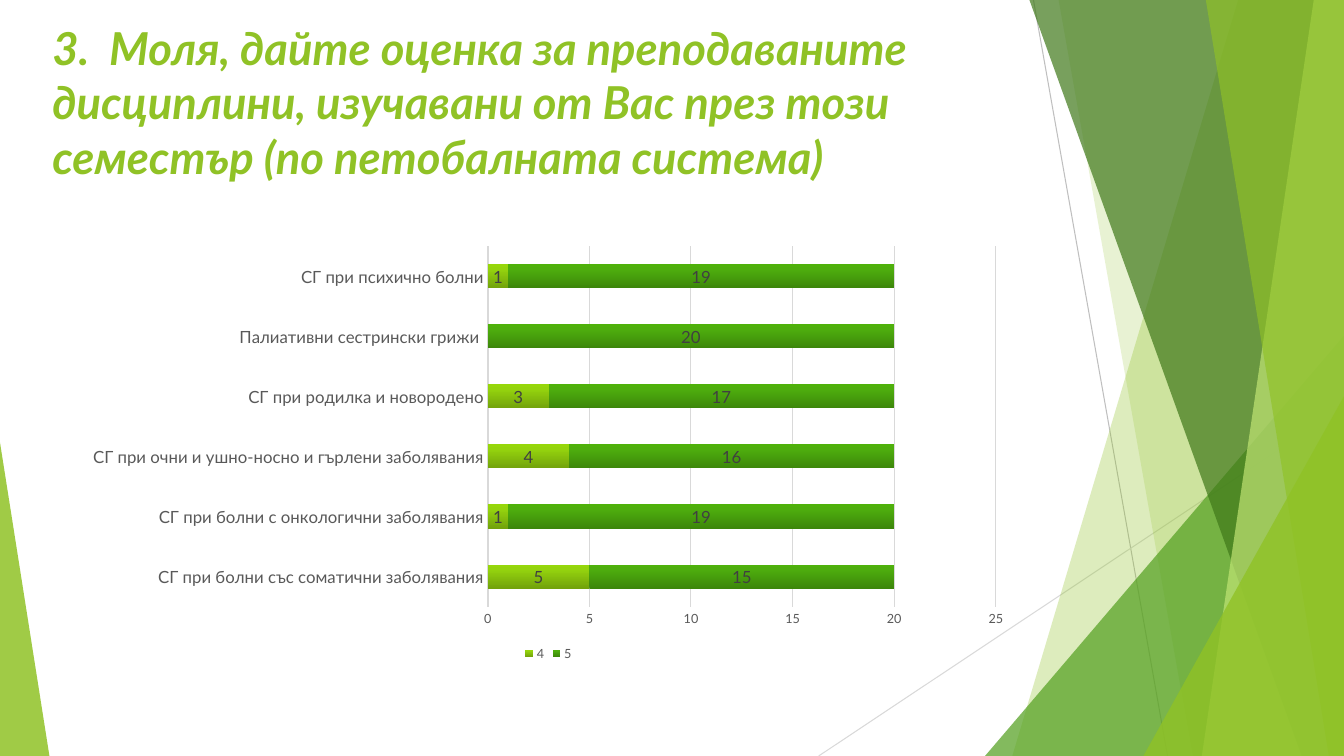
from copy import deepcopy

from lxml import etree
from pptx import Presentation
from pptx.chart.data import CategoryChartData
from pptx.dml.color import RGBColor
from pptx.enum.chart import XL_CHART_TYPE, XL_LEGEND_POSITION, XL_TICK_MARK
from pptx.enum.shapes import MSO_CONNECTOR, MSO_SHAPE
from pptx.enum.text import MSO_ANCHOR
from pptx.oxml import parse_xml
from pptx.oxml.ns import nsdecls, qn
from pptx.util import Inches, Pt

STRAIGHT = MSO_CONNECTOR.STRAIGHT
TRIANGLE = MSO_SHAPE.ISOSCELES_TRIANGLE
BAR_STACKED = XL_CHART_TYPE.BAR_STACKED
LEGEND_BOTTOM = XL_LEGEND_POSITION.BOTTOM
NO_TICK = XL_TICK_MARK.NONE
TOP = MSO_ANCHOR.TOP

COLUMNS, ROWS = 133.3, 75
FONT = "Lato"
GREEN, LEAF, FOREST, LIME = "90C226", "54A021", "3F7819", "C0E474"
GRAY, DARK_GRAY, PALE_GRAY = "595959", "404040", "D9D9D9"

TITLE = ("3.  Моля, дайте оценка за преподаваните дисциплини, "
         "изучавани от Вас през този семестър (по петобалната система)")
SUBJECTS = [
    "СГ при болни със соматични заболявания",
    "СГ при болни с онкологични заболявания",
    "СГ при очни и ушно-носно и гърлени заболявания",
    "СГ при родилка и новородено",
    "Палиативни сестрински грижи ",
    "СГ при психично болни",
]
GRADES = {"4": [5, 1, 4, 3, None, 1], "5": [15, 19, 16, 17, 20, 19]}
GRADIENTS = [("72A20B", "94D30E", "96D70A"), ("3C860A", "4EAD0E", "4EB10A")]
PLOT_AREA = {"x": 0.436, "y": 0.02, "w": 0.536, "h": 0.843}


def color(value):
    return RGBColor.from_string(value)


def grid(*lengths):
    return [Inches(length / 10) for length in lengths]


class SlideBuilder:
    """Draws styled elements on a slide in columns and rows of a tenth of an inch."""

    def __init__(self, presentation):
        self.slide = presentation.slides.add_slide(presentation.slide_layouts[6])
        self.shapes = self.slide.shapes

    def style_font(self, font, size, shade, bold=False, italic=False):
        font.name, font.size = FONT, Pt(size)
        font.bold, font.italic = bold, italic
        font.color.rgb = color(shade)

    def line(self, start, end, shade):
        connector = self.shapes.add_connector(STRAIGHT, *grid(*start, *end))
        connector.line.color.rgb = color(shade)
        connector.line.width = Pt(0.75)
        etree.SubElement(connector._element.spPr, qn("a:effectLst"))

    def paint(self, shape, shade, opacity):
        shape.shadow.inherit = False
        shape.line.fill.background()
        shape.fill.solid()
        shape.fill.fore_color.rgb = color(shade)
        rgb = shape._element.spPr.find(".//" + qn("a:srgbClr"))
        etree.SubElement(rgb, qn("a:alpha")).set("val", str(opacity * 1000))

    def band(self, top_left, bottom_left, shade, opacity):
        points = [(COLUMNS, 0), (COLUMNS, ROWS), (bottom_left, ROWS)]
        builder = self.shapes.build_freeform(*grid(top_left, 0), scale=1.0)
        builder.add_line_segments([grid(*point) for point in points], close=True)
        self.paint(builder.convert_to_shape(), shade, opacity)

    def corner(self, left, top, width, apex, shade, opacity):
        shape = self.shapes.add_shape(TRIANGLE, *grid(left, top, width, ROWS - top))
        shape.adjustments[0] = apex
        self.paint(shape, shade, opacity)

    def title(self, text, left, top, width, height):
        frame = self.shapes.add_textbox(*grid(left, top, width, height)).text_frame
        frame.word_wrap = True
        frame.vertical_anchor = TOP
        paragraph = frame.paragraphs[0]
        paragraph.text = text
        self.style_font(paragraph.font, 32.4, GREEN, bold=True, italic=True)

    def stacked_bars(self, categories, series_values, left, top, width, height):
        data = CategoryChartData()
        data.categories = categories
        for name, values in series_values.items():
            data.add_series(name, values)
        frame = self.shapes.add_chart(
            BAR_STACKED, *grid(left, top, width, height), data)
        chart = frame.chart
        self.style_font(chart.font, 10, "000000")
        chart.has_title = False
        chart.has_legend = True
        chart.legend.position = LEGEND_BOTTOM
        chart.legend.include_in_layout = False
        self.style_font(chart.legend.font, 9, GRAY)
        self.style_axes(chart)
        self.place_plot(chart)
        plot = chart.plots[0]
        plot.gap_width, plot.overlap = 150, 100
        plot.vary_by_categories = False
        for series, shades in zip(plot.series, GRADIENTS):
            self.style_series(series, shades)

    def style_axes(self, chart):
        for axis, size in ((chart.category_axis, 12), (chart.value_axis, 9)):
            axis.major_tick_mark = axis.minor_tick_mark = NO_TICK
            self.style_font(axis.tick_labels.font, size, GRAY)
        chart.category_axis.format.line.color.rgb = color(PALE_GRAY)
        chart.category_axis.format.line.width = Pt(1)
        values = chart.value_axis
        values.minimum_scale, values.maximum_scale, values.major_unit = 0, 25, 5
        values.format.line.fill.background()
        values.major_gridlines.format.line.color.rgb = color(PALE_GRAY)
        values.major_gridlines.format.line.width = Pt(0.75)

    def place_plot(self, chart):
        plot_area = chart._chartSpace.chart.plotArea
        for layout in plot_area.findall(qn("c:layout")):
            plot_area.remove(layout)
        modes = "".join(f'<c:{side}Mode val="edge"/>' for side in "xy")
        sizes = "".join(f'<c:{k} val="{share}"/>' for k, share in PLOT_AREA.items())
        plot_area.insert(0, parse_xml(
            f'<c:layout {nsdecls("c")}><c:manualLayout>'
            f'<c:layoutTarget val="inner"/>{modes}{sizes}'
            '</c:manualLayout></c:layout>'))

    def style_series(self, series, shades):
        fill = series.format.fill
        fill.gradient()
        fill.gradient_angle = 90
        stop_list = series._element.find(".//" + qn("a:gsLst"))
        stop_list.append(deepcopy(stop_list[-1]))
        for stop, shade, position in zip(fill.gradient_stops, shades, (0, 0.8, 1)):
            stop.color.rgb = color(shade)
            stop.position = position
        labels = series.data_labels
        labels.show_value = True
        self.style_font(labels.font, 12, DARK_GRAY)


def main():
    presentation = Presentation()
    presentation.slide_width, presentation.slide_height = grid(COLUMNS, ROWS)
    builder = SlideBuilder(presentation)
    builder.line((102.5, 0), (115.8, ROWS), "BFBFBF")
    builder.line((COLUMNS, 40.3), (81.2, ROWS), PALE_GRAY)
    builder.band(122.8, 100.4, GREEN, 30)
    builder.band(105, 118.3, GREEN, 20)
    builder.corner(97.7, 33.3, 35.6, 1, LEAF, 72)
    builder.band(102.1, 129.1, FOREST, 70)
    builder.band(130.3, 119.2, LIME, 70)
    builder.band(119.6, 131.8, GREEN, 65)
    builder.corner(113.4, 39.3, 19.9, 1, GREEN, 80)
    builder.corner(0, 43.9, 4.9, 0, GREEN, 85)
    builder.title(TITLE, 4.2, 1.5, 97.2, 19.6)
    builder.stacked_bars(SUBJECTS, GRADES, 7.4, 23.6, 94, 42.4)
    presentation.save("out.pptx")


if __name__ == "__main__":
    main()
